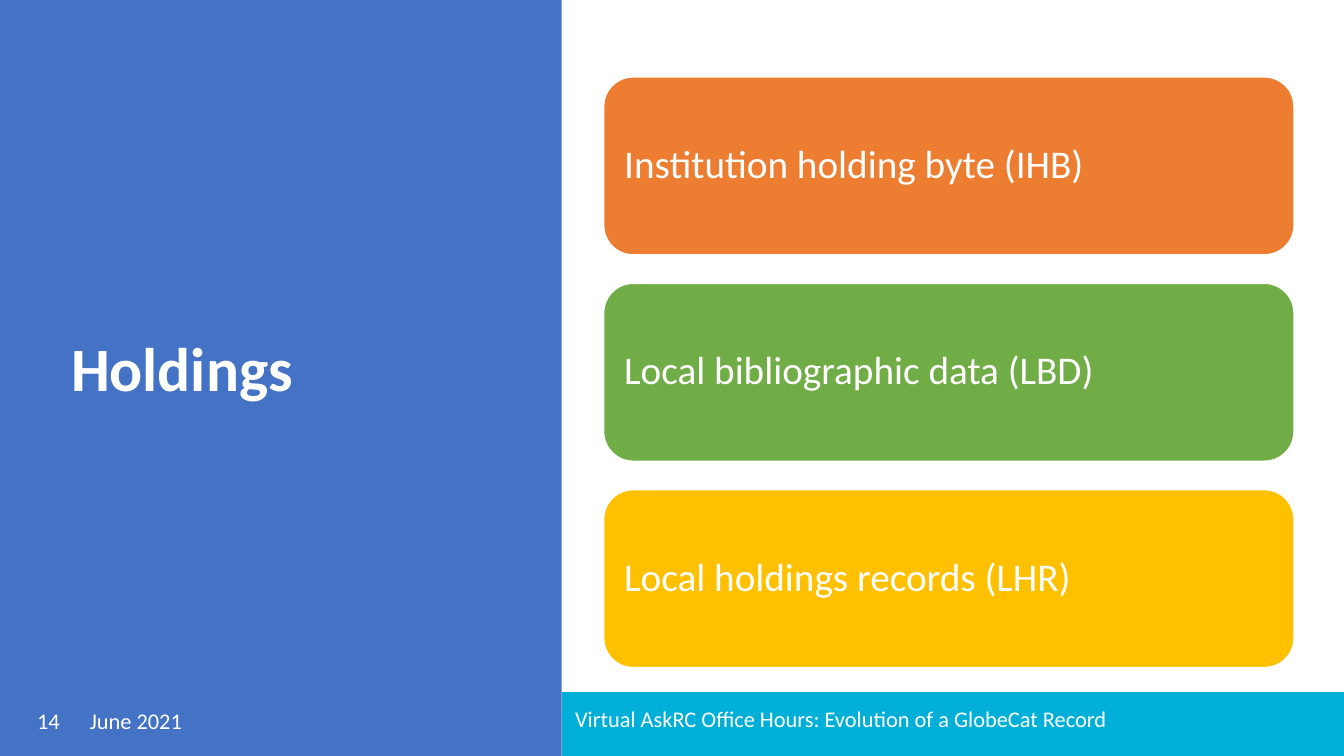
from dataclasses import dataclass

from pptx import Presentation
from pptx.dml.color import RGBColor
from pptx.enum.shapes import MSO_SHAPE
from pptx.enum.text import MSO_ANCHOR, PP_ALIGN
from pptx.shapes.autoshape import Shape
from pptx.slide import Slide
from pptx.util import Inches, Pt

RECTANGLE = MSO_SHAPE.RECTANGLE
ROUNDED = MSO_SHAPE.ROUNDED_RECTANGLE
MIDDLE = MSO_ANCHOR.MIDDLE
LEFT, CENTER = PP_ALIGN.LEFT, PP_ALIGN.CENTER

WHITE = RGBColor(0xFF, 0xFF, 0xFF)
BLUE = RGBColor(0x44, 0x72, 0xC4)
CYAN = RGBColor(0x00, 0xAF, 0xD7)
ORANGE = RGBColor(0xED, 0x7D, 0x31)
GREEN = RGBColor(0x70, 0xAD, 0x47)
YELLOW = RGBColor(0xFF, 0xC0, 0x00)

FONT = "Calibri"
SLIDE_WIDTH = Inches(10)
SLIDE_HEIGHT = SLIDE_WIDTH * 9 // 16


@dataclass(frozen=True)
class Area:
    """A rectangle in percent of the slide's width and height."""
    left: float
    top: float
    width: float
    height: float

    def lengths(self) -> tuple[int, int, int, int]:
        return (
            round(SLIDE_WIDTH * self.left / 100),
            round(SLIDE_HEIGHT * self.top / 100),
            round(SLIDE_WIDTH * self.width / 100),
            round(SLIDE_HEIGHT * self.height / 100),
        )


@dataclass(frozen=True)
class Label:
    text: str
    area: Area
    size: float = 12
    bold: bool = False
    alignment: PP_ALIGN = LEFT
    line_spacing: float = 0.9


@dataclass(frozen=True)
class Card:
    text: str
    color: RGBColor


PANEL_WIDTH = 41.8
FOOTER_TOP, FOOTER_HEIGHT = 92.6, 5.4
STRIP_TOP = 91.55
CARD_LEFT, CARD_WIDTH = 44.9, 51.4
CARD_TOP, CARD_HEIGHT, CARD_PITCH = 10.15, 23.6, 27.3

LABELS = [
    Label("Holdings", Area(4.3, 9.1, 31.2, 80.2), size=33, bold=True),
    Label("14", Area(1.4, FOOTER_TOP, 4.4, FOOTER_HEIGHT),
          alignment=CENTER, line_spacing=1),
    Label("June 2021", Area(5.7, FOOTER_TOP, 9.3, FOOTER_HEIGHT),
          line_spacing=1),
    Label("Virtual AskRC Office Hours: Evolution of a GlobeCat Record",
          Area(PANEL_WIDTH, FOOTER_TOP, 43.5, FOOTER_HEIGHT)),
]
CARDS = [
    Card("Institution holding byte (IHB)", ORANGE),
    Card("Local bibliographic data (LBD)", GREEN),
    Card("Local holdings records (LHR)", YELLOW),
]


def add_block(slide: Slide, kind: MSO_SHAPE, area: Area, color: RGBColor) -> Shape:
    shape = slide.shapes.add_shape(kind, *area.lengths())
    shape.shadow.inherit = False
    shape.fill.solid()
    shape.fill.fore_color.rgb = color
    shape.line.fill.background()
    return shape


def write(shape: Shape, label: Label) -> None:
    frame = shape.text_frame
    frame.word_wrap = True
    frame.vertical_anchor = MIDDLE
    paragraph = frame.paragraphs[0]
    paragraph.alignment = label.alignment
    paragraph.line_spacing = label.line_spacing
    run = paragraph.add_run()
    run.text = label.text
    run.font.name = FONT
    run.font.size = Pt(label.size)
    run.font.bold = label.bold
    run.font.color.rgb = WHITE


def add_label(slide: Slide, label: Label) -> None:
    write(slide.shapes.add_textbox(*label.area.lengths()), label)


def add_card(slide: Slide, card: Card, row: int) -> None:
    area = Area(CARD_LEFT, CARD_TOP + row * CARD_PITCH, CARD_WIDTH, CARD_HEIGHT)
    shape = add_block(slide, ROUNDED, area, card.color)
    shape.line.color.rgb = WHITE
    shape.line.width = Pt(1)
    write(shape, Label(card.text, area, size=21))
    shape.text_frame.margin_left = Inches(0.09)
    shape.text_frame.margin_right = Inches(0.09)


def main() -> None:
    presentation = Presentation()
    presentation.slide_width = SLIDE_WIDTH
    presentation.slide_height = SLIDE_HEIGHT
    slide = presentation.slides.add_slide(presentation.slide_layouts[6])

    add_block(slide, RECTANGLE,
              Area(PANEL_WIDTH, STRIP_TOP, 100 - PANEL_WIDTH, 100 - STRIP_TOP), CYAN)
    add_block(slide, RECTANGLE, Area(0, 0, PANEL_WIDTH, 100), BLUE)
    for label in LABELS:
        add_label(slide, label)
    for row, card in enumerate(CARDS):
        add_card(slide, card, row)

    presentation.save("out.pptx")


if __name__ == "__main__":
    main()
